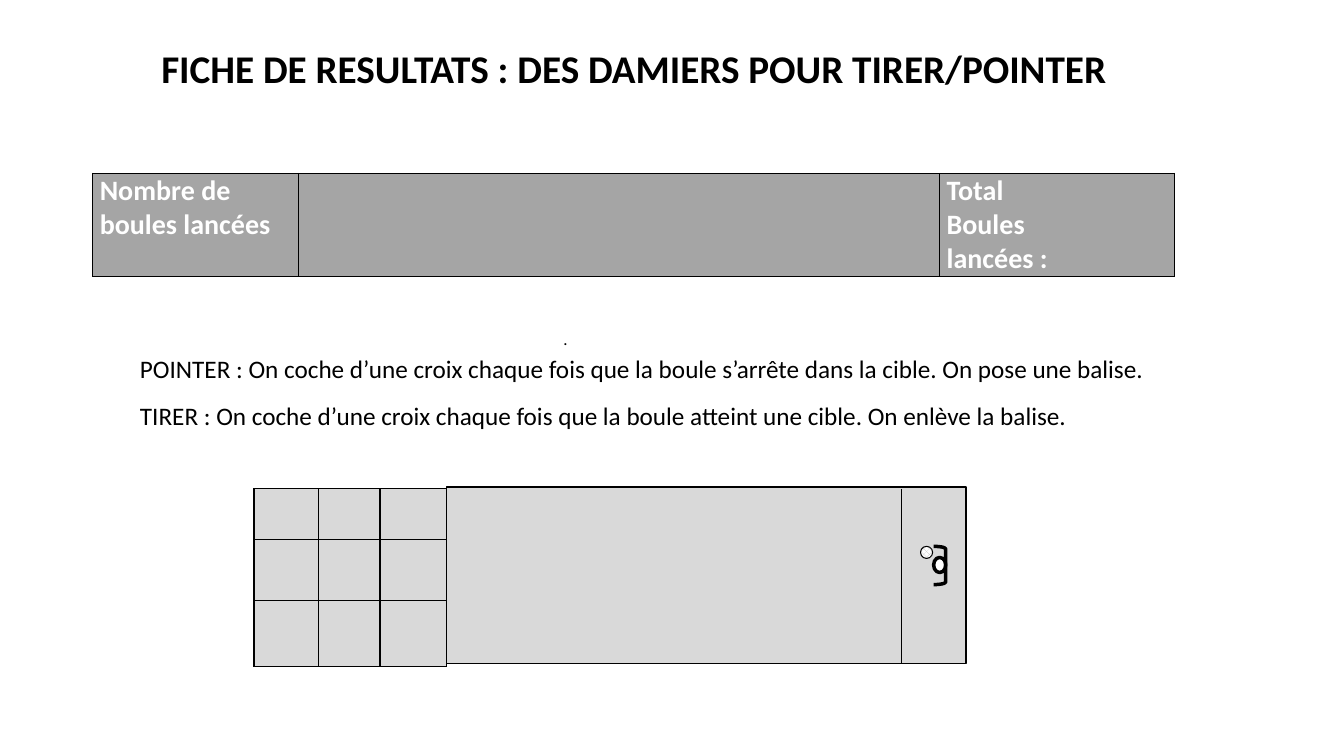
from dataclasses import dataclass
from typing import Optional

from lxml.etree import SubElement
from pptx import Presentation
from pptx.dml.color import RGBColor
from pptx.enum.dml import MSO_PATTERN
from pptx.enum.shapes import MSO_CONNECTOR, MSO_SHAPE
from pptx.enum.text import MSO_ANCHOR, MSO_AUTO_SIZE, PP_ALIGN
from pptx.oxml import parse_xml
from pptx.oxml.ns import nsdecls, qn
from pptx.util import Emu, Pt

BLACK = RGBColor(0x00, 0x00, 0x00)
WHITE = RGBColor(0xFF, 0xFF, 0xFF)
GREY = RGBColor(0xA5, 0xA5, 0xA5)
LIGHT_GREY = RGBColor(0xD9, 0xD9, 0xD9)
SILVER = RGBColor(0xC0, 0xC0, 0xC0)
FONT = "Calibri"
EMU_PER_PX = 9144


@dataclass(frozen=True)
class Box:
    left: int
    top: int
    width: int
    height: int

    def emu(self) -> tuple[Emu, Emu, Emu, Emu]:
        return px(self.left), px(self.top), px(self.width), px(self.height)


@dataclass(frozen=True)
class Grid:
    left: int
    top: int
    cols: list[int]
    rows: list[int]
    fill: RGBColor
    texts: dict[tuple[int, int], str]


@dataclass(frozen=True)
class Figure:
    kind: MSO_SHAPE
    box: Box
    fill: Optional[RGBColor]
    weight: float


GRIDS = [
    Grid(92, 172, [204, 636, 233], [100], GREY,
         {(0, 0): "Nombre de\nboules lancées", (0, 2): "Total\nBoules\nlancées :"}),
    Grid(252, 485, [64, 61, 66], [50, 61, 65], LIGHT_GREY, {}),
]
LANE = Figure(MSO_SHAPE.RECTANGLE, Box(443, 483, 515, 175), LIGHT_GREY, 1)
HEAD = Figure(MSO_SHAPE.OVAL, Box(926, 553, 12, 15), WHITE, 2.5)
ARMS = Figure(MSO_SHAPE.RIGHT_BRACKET, Box(926, 542, 12, 38), None, 2.5)
BALL = Figure(MSO_SHAPE.OVAL, Box(913, 542, 12, 12), WHITE, 0.75)


def px(n: int) -> Emu:
    return Emu(n * EMU_PER_PX)


def write(tf, text: str, *, size: int, color: RGBColor = BLACK, bold: bool = False,
          align: PP_ALIGN = PP_ALIGN.LEFT, before: int = 0) -> None:
    tf.text = text
    tf.word_wrap = True
    for p in tf.paragraphs:
        p.alignment = align
        p.space_before = Pt(before)
        for r in p.runs:
            r.font.name = FONT
            r.font.size = Pt(size)
            r.font.bold = bold
            r.font.color.rgb = color


def add_text(shapes, box: Box, text: str, *, size: int, before: int = 0) -> None:
    sp = shapes.add_textbox(*box.emu())
    write(sp.text_frame, text, size=size, before=before)


def border(cell) -> None:
    tc_pr = cell._tc.get_or_add_tcPr()
    for i, side in enumerate("LRTB"):
        tc_pr.insert(i, parse_xml(
            f'<a:ln{side} {nsdecls("a")} w="{Pt(1)}"><a:solidFill>'
            f'<a:srgbClr val="{BLACK}"/></a:solidFill></a:ln{side}>'))


def add_grid(shapes, grid: Grid) -> None:
    box = Box(grid.left, grid.top, sum(grid.cols), sum(grid.rows))
    table = shapes.add_table(len(grid.rows), len(grid.cols), *box.emu()).table
    table.first_row = table.horz_banding = False
    for col, width in zip(table.columns, grid.cols):
        col.width = px(width)
    for i, height in enumerate(grid.rows):
        table.rows[i].height = px(height)
        for j in range(len(grid.cols)):
            cell = table.cell(i, j)
            cell.margin_left = cell.margin_right = px(7)
            cell.margin_top = cell.margin_bottom = 0
            cell.fill.solid()
            cell.fill.fore_color.rgb = grid.fill
            border(cell)
            if (i, j) in grid.texts:
                write(cell.text_frame, grid.texts[i, j], size=20, color=WHITE, bold=True)


def add_figure(shapes, fig: Figure):
    sp = shapes.add_shape(fig.kind, *fig.box.emu())
    sp.shadow.inherit = False
    if fig.fill is None:
        sp.fill.background()
    else:
        sp.fill.solid()
        sp.fill.fore_color.rgb = fig.fill
    sp.line.color.rgb = BLACK
    sp.line.width = Pt(fig.weight)
    return sp


def add_player(shapes) -> None:
    group = shapes.add_group_shape()
    add_figure(group.shapes, HEAD)
    add_figure(group.shapes, ARMS).adjustments[0] = 0.21
    ball = add_figure(group.shapes, BALL)
    ball.fill.patterned()
    ball.fill.pattern = MSO_PATTERN.from_xml("openDmnd")
    ball.fill.fore_color.rgb = SILVER
    ball.fill.back_color.rgb = WHITE


def add_throw_line(shapes) -> None:
    line = shapes.add_connector(MSO_CONNECTOR.STRAIGHT, px(894), px(485), px(894), px(658))
    line.line.color.rgb = BLACK
    line.line.width = Pt(0.75)
    SubElement(line._element.spPr, qn("a:effectLst"))


def set_title(title, box: Box, text: str) -> None:
    title.left, title.top, title.width, title.height = box.emu()
    tf = title.text_frame
    write(tf, text, size=28, bold=True, align=PP_ALIGN.CENTER)
    tf.vertical_anchor = MSO_ANCHOR.TOP
    tf.auto_size = MSO_AUTO_SIZE.NONE


def main() -> None:
    prs = Presentation()
    prs.slide_width, prs.slide_height = px(1333), px(750)
    s = prs.slides.add_slide(prs.slide_layouts[5])
    set_title(s.shapes.title, Box(92, 39, 1073, 57),
              "FICHE DE RESULTATS : DES DAMIERS POUR TIRER/POINTER")
    for grid in GRIDS:
        add_grid(s.shapes, grid)
    add_text(s.shapes, Box(549, 321, 759, 61), ".", size=12)
    add_text(s.shapes, Box(129, 346, 1204, 88),
             "POINTER : On coche d’une croix chaque fois que la boule s’arrête dans la cible. "
             "On pose une balise.\n"
             "TIRER : On coche d’une croix chaque fois que la boule atteint une cible. "
             "On enlève la balise.", size=18, before=12)
    add_figure(s.shapes, LANE)
    add_throw_line(s.shapes)
    add_player(s.shapes)
    prs.save("out.pptx")


if __name__ == "__main__":
    main()
